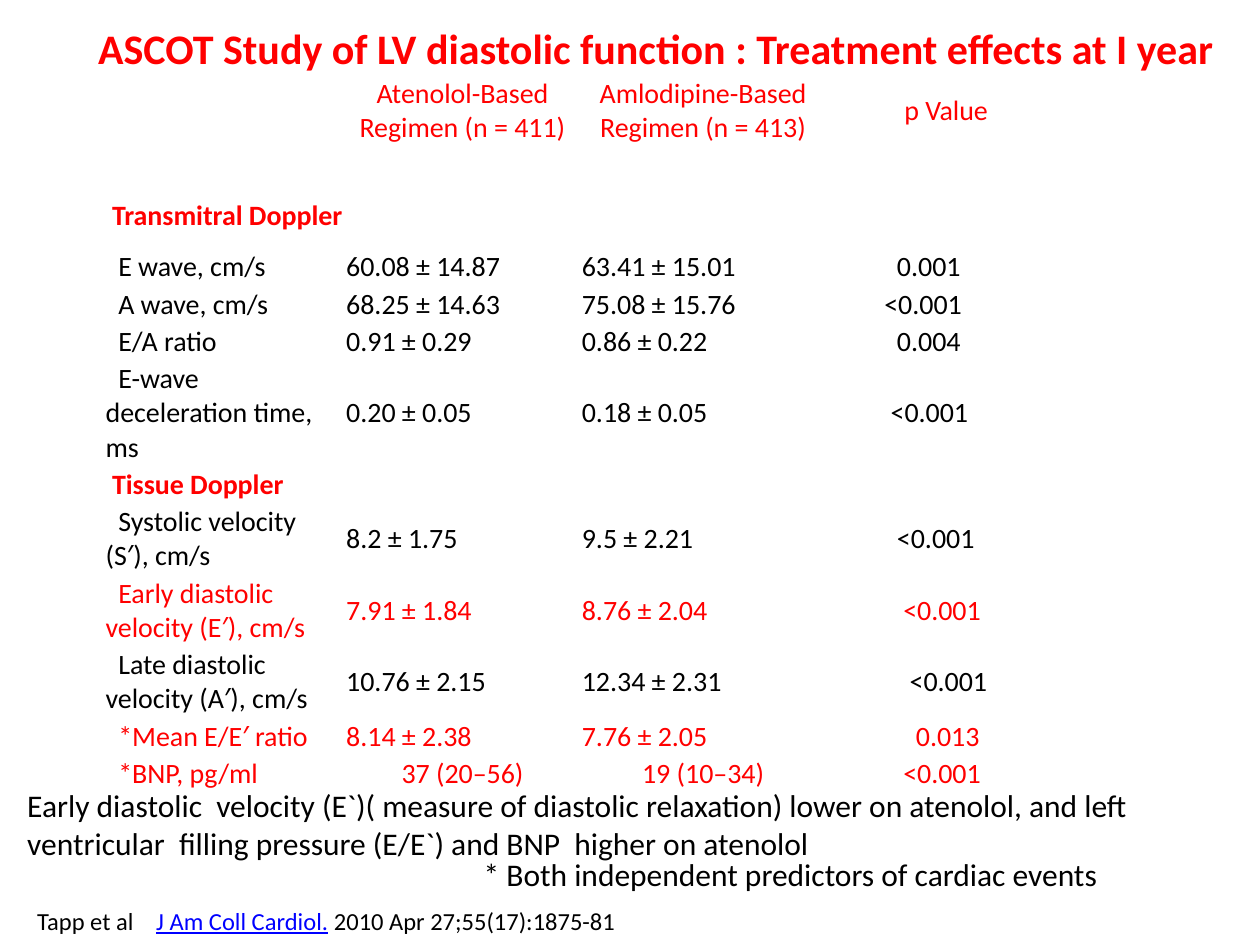
from lxml import etree
from pptx import Presentation
from pptx.dml.color import RGBColor
from pptx.enum.text import MSO_ANCHOR, MSO_AUTO_SIZE, PP_ALIGN
from pptx.oxml.ns import qn
from pptx.util import Cm, Pt

MIDDLE = MSO_ANCHOR.MIDDLE
LEFT, CENTER = PP_ALIGN.LEFT, PP_ALIGN.CENTER
GROW = MSO_AUTO_SIZE.SHAPE_TO_FIT_TEXT
RED, BLACK, BLUE, WHITE = "FF0000", "000000", "0000FF", "FFFFFF"
STEP = 0.1275  # indent unit in the table, cm
ONE, TWO, THREE = 0.69, 1.3, 1.93  # row heights by number of lines, cm


def rgb(value):
    return RGBColor.from_string(value)


class Sheet:
    """Style and current slide."""

    font = "Calibri"
    cell_size = 16
    cell_margin = 0.03

    def __init__(self, slide):
        self.slide = slide

    def run(self, p, text, size, color=BLACK, **formats):
        r = p.add_run()
        r.text = text
        r.font.color.rgb = rgb(color)
        for name, value in {"name": self.font, "size": Pt(size), **formats}.items():
            setattr(r.font, name, value)

    def text(self, x, y, w, h, size, *runs, tab=None):
        sp = self.slide.shapes.add_textbox(Cm(x), Cm(y), Cm(w), Cm(h))
        tf = sp.text_frame
        tf.word_wrap, tf.auto_size = True, GROW
        p = tf.paragraphs[0]
        if tab:
            tabs = etree.SubElement(p._p.get_or_add_pPr(), qn("a:tabLst"))
            etree.SubElement(tabs, qn("a:tab"), pos=str(Cm(tab)), algn="l")
        for text, formats in runs:
            self.run(p, text, size, **formats)

    def cell(self, cell, text="", color=BLACK, bold=False, align=LEFT, steps=0):
        cell.fill.solid()
        cell.fill.fore_color.rgb = rgb(WHITE)
        cell.vertical_anchor = MIDDLE
        for side in ("left", "right", "top", "bottom"):
            setattr(cell, f"margin_{side}", Cm(self.cell_margin))
        p = cell.text_frame.paragraphs[0]
        p.alignment = align
        if text:
            p._p.get_or_add_pPr().set("indent", str(Cm(steps * STEP)))
            self.run(p, text, self.cell_size, color, bold=bold)
        else:
            etree.SubElement(p._p, qn("a:endParaRPr"), sz=str(self.cell_size * 100))

    def table(self, x, y, widths, rows):
        """Each row: height, colour, cell texts, alignment, p value indent."""
        heights = [row[0] for row in rows]
        table = self.slide.shapes.add_table(
            len(rows), len(widths), Cm(x), Cm(y), Cm(sum(widths)), Cm(sum(heights))
        ).table
        table.first_row = table.horz_banding = False
        for column, width in zip(table.columns, widths):
            column.width = Cm(width)
        for i, (height, color, texts, align, p_steps) in enumerate(rows):
            table.rows[i].height = Cm(height)
            heading = len(texts) == 1
            texts = texts + [""] * (len(widths) - len(texts))
            aligns = [LEFT, align, align, LEFT if p_steps else align]
            steps = [1 if heading else 2, 0, 0, p_steps]
            for j, text in enumerate(texts):
                self.cell(table.cell(i, j), text, color, heading, aligns[j], steps[j])


ROWS = [
    (TWO, RED, ["", "Atenolol-Based Regimen (n = 411)",
                "Amlodipine-Based Regimen (n = 413)", "p Value"], CENTER, 0),
    (ONE, BLACK, [], LEFT, 0),
    (TWO, RED, ["Transmitral Doppler"], LEFT, 0),
    (ONE, BLACK, ["E wave, cm/s", "60.08 ± 14.87", "63.41 ± 15.01", "0.001"], LEFT, 11),
    (ONE, BLACK, ["A wave, cm/s", "68.25 ± 14.63", "75.08 ± 15.76", "<0.001"], LEFT, 9),
    (ONE, BLACK, ["E/A ratio", "0.91 ± 0.29", "0.86 ± 0.22", "0.004"], LEFT, 11),
    (THREE, BLACK, ["E-wave deceleration time, ms", "0.20 ± 0.05", "0.18 ± 0.05",
                    "<0.001"], LEFT, 10),
    (ONE, RED, ["Tissue Doppler"], LEFT, 0),
    (TWO, BLACK, ["Systolic velocity (S′), cm/s", "8.2 ± 1.75", "9.5 ± 2.21",
                  "<0.001"], LEFT, 11),
    (TWO, RED, ["Early diastolic velocity (E′), cm/s", "7.91 ± 1.84", "8.76 ± 2.04",
                "<0.001"], LEFT, 12),
    (TWO, BLACK, ["Late diastolic velocity (A′), cm/s", "10.76 ± 2.15", "12.34 ± 2.31",
                  "<0.001"], LEFT, 13),
    (ONE, RED, ["*Mean E/E′ ratio", "8.14 ± 2.38", "7.76 ± 2.05", "0.013"], LEFT, 14),
    (ONE, RED, ["*BNP, pg/ml", "37 (20–56)", "19 (10–34)", "<0.001"], CENTER, 12),
]


def main():
    prs = Presentation()
    prs.slide_width, prs.slide_height = Cm(25.4), Cm(19.05)
    sheet = Sheet(prs.slides.add_slide(prs.slide_layouts[6]))

    # Treatment effects table
    sheet.table(2.1, 1.52, [4.85, 4.75, 4.95, 4.85], ROWS)

    # Title
    sheet.text(1.73, 0.33, 23.3, 1.27, 24,
               ("ASCOT Study of LV diastolic function : Treatment effects at I year",
                {"color": RED, "bold": True}))

    # Citation
    sheet.text(0.5, 18.14, 17.42, 0.86, 14,
               ("Tapp et al\t", {}),
               ("J Am Coll Cardiol.", {"color": BLUE, "underline": True}),
               (" 2010 Apr 27;55(17):1875-81", {}), tab=2.4)

    # Footnote and conclusion
    sheet.text(9.5, 17.12, 13.03, 1.02, 18,
               ("* Both independent predictors of cardiac events", {}))
    sheet.text(0.3, 15.72, 24.61, 1.8, 18,
               ("Early diastolic  velocity (E`)( measure of diastolic relaxation) lower on "
                "atenolol, and left ventricular  filling pressure (E/E`) and BNP  higher on "
                "atenolol", {}))

    prs.save("out.pptx")


if __name__ == "__main__":
    main()
